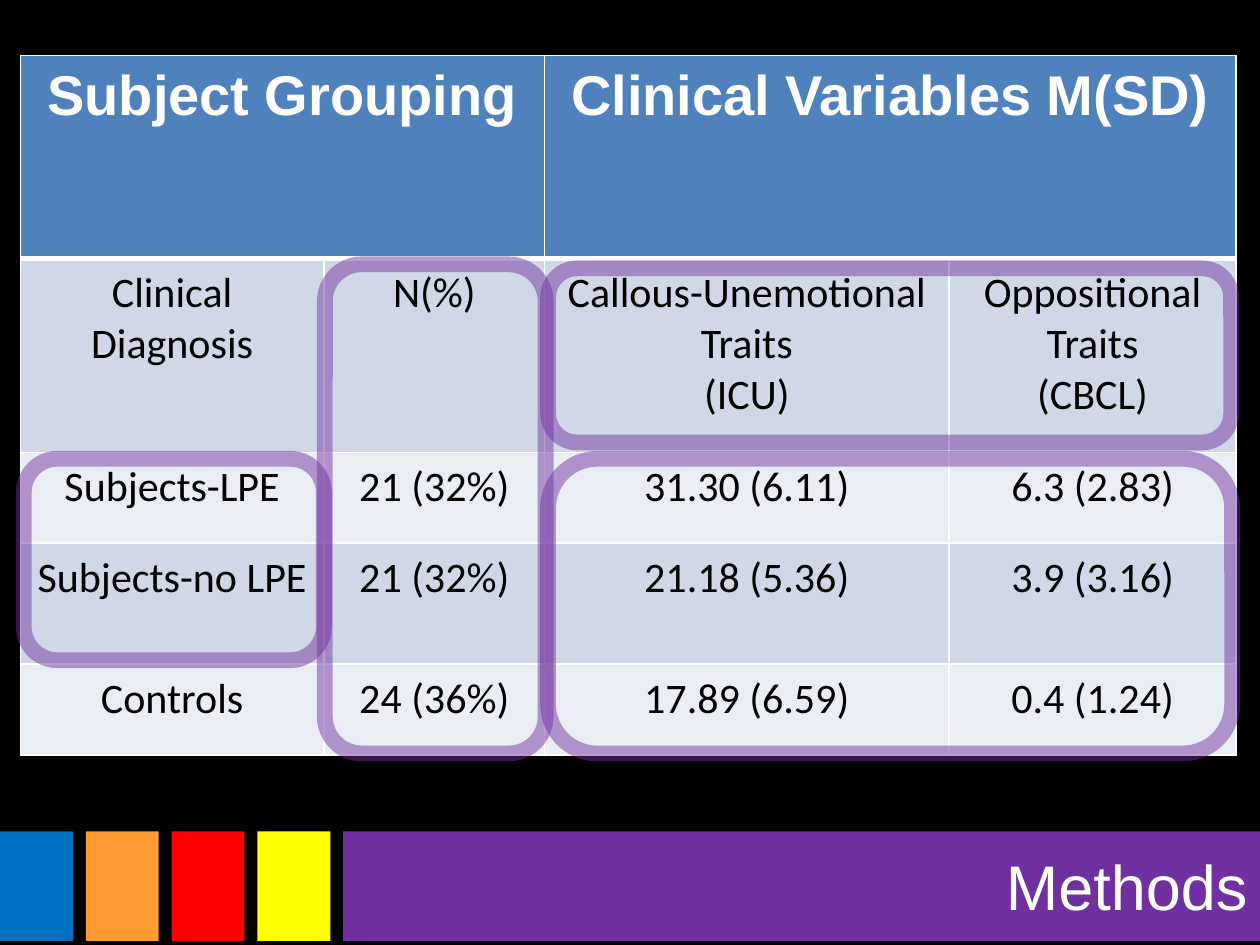
"""Build the Methods slide with its subject grouping table and highlighted regions."""
from lxml import etree
from pptx import Presentation
from pptx.dml.color import RGBColor
from pptx.enum.shapes import MSO_SHAPE
from pptx.enum.text import MSO_AUTO_SIZE, PP_ALIGN
from pptx.oxml.ns import qn
from pptx.util import Cm, Pt

BLACK = RGBColor(0x00, 0x00, 0x00)
WHITE = RGBColor(0xFF, 0xFF, 0xFF)
BLUE = RGBColor(0x00, 0x70, 0xC0)
ORANGE = RGBColor(0xFF, 0x99, 0x33)
RED = RGBColor(0xFF, 0x00, 0x00)
YELLOW = RGBColor(0xFF, 0xFF, 0x00)
PURPLE = RGBColor(0x70, 0x30, 0xA0)
HEADER_BLUE = RGBColor(0x4F, 0x81, 0xBD)
BAND_DARK = RGBColor(0xD0, 0xD8, 0xE8)
BAND_LIGHT = RGBColor(0xE9, 0xED, 0xF4)


def add_box(slide, kind, left, top, width, height):
    shape = slide.shapes.add_shape(kind, Cm(left), Cm(top), Cm(width), Cm(height))
    shape.shadow.inherit = False
    return shape


def set_borders(cell, widths):
    properties = cell._tc.get_or_add_tcPr()
    for position, (side, width) in enumerate(widths.items()):
        line = etree.Element(qn(f"a:ln{side}"), w=str(Pt(width)))
        fill = etree.SubElement(line, qn("a:solidFill"))
        etree.SubElement(fill, qn("a:srgbClr"), val=str(WHITE))
        properties.insert(position, line)


presentation = Presentation()
presentation.slide_width, presentation.slide_height = Cm(25.4), Cm(19.05)
slide = presentation.slides.add_slide(presentation.slide_layouts[6])
slide.background.fill.solid()
slide.background.fill.fore_color.rgb = BLACK

for index, color in enumerate([BLUE, ORANGE, RED, YELLOW, PURPLE]):
    left = 1.73 * index
    width = 25.4 - left if color == PURPLE else 1.47
    bar = add_box(slide, MSO_SHAPE.RECTANGLE, left, 16.76, width, 2.21)
    bar.fill.solid()
    bar.fill.fore_color.rgb = color
    bar.line.fill.background()

title = slide.shapes.add_textbox(Cm(6.88), Cm(16.97), Cm(18.52), Cm(1.8))
title.text_frame.word_wrap = True
title.text_frame.auto_size = MSO_AUTO_SIZE.SHAPE_TO_FIT_TEXT
title.text_frame.text = "Methods"
paragraph = title.text_frame.paragraphs[0]
paragraph.alignment = PP_ALIGN.RIGHT
paragraph.font.name, paragraph.font.size = "Arial", Pt(36)
paragraph.font.color.rgb = WHITE

rows = [
    ["Subject Grouping", "", "Clinical Variables M(SD)", ""],
    ["Clinical Diagnosis", "N(%)", "Callous-Unemotional Traits\n(ICU)", "Oppositional Traits\n(CBCL)"],
    ["Subjects-LPE", "21 (32%)", "31.30 (6.11)", "6.3 (2.83)"],
    ["Subjects-no LPE", "21 (32%)", "21.18 (5.36)", "3.9 (3.16)"],
    ["Controls", "24 (36%)", "17.89 (6.59)", "0.4 (1.24)"],
]
column_widths = [6.12, 4.45, 8.15, 5.79]
row_heights = [4.09, 3.91, 1.83, 2.44, 1.83]
table = slide.shapes.add_table(
    len(rows), len(column_widths), Cm(0.41), Cm(1.12), Cm(sum(column_widths)), Cm(sum(row_heights))
).table
for column, width in zip(table.columns, column_widths):
    column.width = Cm(width)
for row, height in zip(table.rows, row_heights):
    row.height = Cm(height)
for first in (0, 2):
    table.cell(0, first).merge(table.cell(0, first + 1))

for row_index, texts in enumerate(rows):
    is_header = row_index == 0
    band = BAND_DARK if row_index % 2 else BAND_LIGHT
    for column_index, text in enumerate(texts):
        cell = table.cell(row_index, column_index)
        cell.margin_left = cell.margin_right = Cm(0.33)
        cell.margin_top = cell.margin_bottom = Cm(0.18)
        cell.fill.solid()
        cell.fill.fore_color.rgb = HEADER_BLUE if is_header else band
        set_borders(cell, {"L": 1, "R": 1, "T": 3 if row_index == 1 else 1, "B": 3 if is_header else 1})
        cell.text = text
        for paragraph in cell.text_frame.paragraphs:
            paragraph.alignment = PP_ALIGN.CENTER
            paragraph.font.name = "Arial" if is_header else "Calibri"
            paragraph.font.size = Pt(32 if is_header else 24)
            paragraph.font.bold = is_header
            paragraph.font.color.rgb = WHITE if is_header else BLACK

highlights = [
    (6.55, 5.33, 4.45, 9.86),
    (11.05, 5.41, 13.77, 3.51),
    (0.48, 9.25, 6.05, 4.06),
    (11.05, 9.25, 13.79, 5.94),
]
for bounds in highlights:
    highlight = add_box(slide, MSO_SHAPE.ROUNDED_RECTANGLE, *bounds)
    highlight.fill.background()
    highlight.line.width = Pt(9)
    highlight.line.color.rgb = PURPLE
    line_color = highlight.line._get_or_add_ln().find(".//" + qn("a:srgbClr"))
    etree.SubElement(line_color, qn("a:alpha"), val="48000")

presentation.save("out.pptx")
